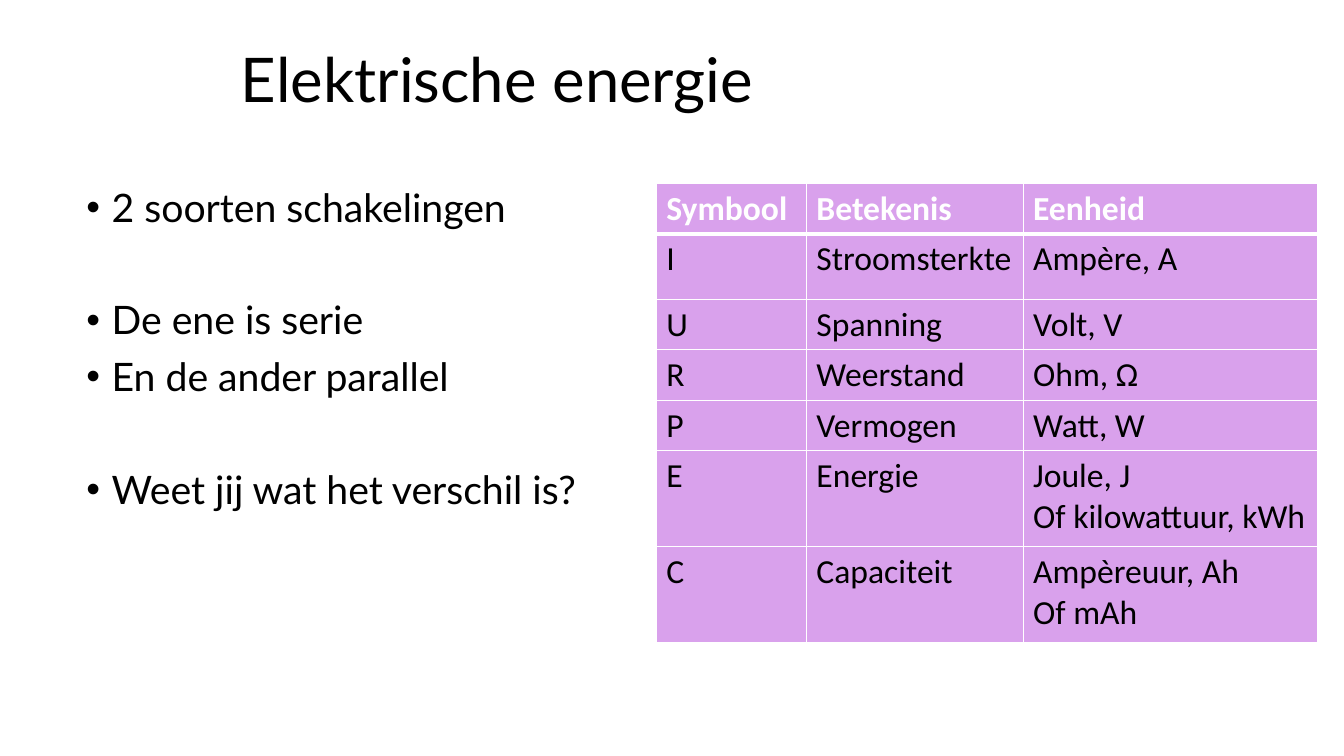
from dataclasses import dataclass
from lxml.etree import SubElement
from pptx import Presentation
from pptx.dml.color import RGBColor
from pptx.enum.text import MSO_ANCHOR, MSO_AUTO_SIZE, PP_ALIGN
from pptx.oxml.ns import qn
from pptx.oxml.xmlchemy import OxmlElement
from pptx.util import Pt

TITLE = "Elektrische energie"
# Text and space before, in points
POINTS = [
    ("2 soorten schakelingen", 0),
    ("De ene is serie", 50.3),
    ("En de ander parallel", 10),
    ("Weet jij wat het verschil is?", 50.3),
]
# Row height in points and cell texts
ROWS = [
    (36, ("Symbool", "Betekenis", "Eenheid")),
    (46.8, ("I", "Stroomsterkte", "Ampère, A")),
    (36, ("U", "Spanning", "Volt, V")),
    (36, ("R", "Weerstand", "Ohm, Ω")),
    (36, ("P", "Vermogen", "Watt, W")),
    (68.4, ("E", "Energie", "Joule, J\nOf kilowattuur, kWh")),
    (68.4, ("C", "Capaciteit", "Ampèreuur, Ah\nOf mAh")),
]
COLS = (107.3, 154.8, 210.2)
TOP = 131


@dataclass(frozen=True)
class Theme:
    black: str = "000000"
    white: str = "FFFFFF"
    purple: str = "9900CC"
    alpha: int = 37
    text: str = "Lato"
    grid: str = "Calibri"
    title: int = 44
    body: int = 28
    cell: int = 24


theme = Theme()


def style(para, face, size, color, bold=False):
    font = para.font
    font.name, font.size, font.bold = face, Pt(size), bold
    font.color.rgb = RGBColor.from_string(color)


def bullet(para):
    """Add a bullet with a hanging indent of 18 points."""
    props = para._p.get_or_add_pPr()
    props.set("marL", str(Pt(18)))
    props.set("indent", str(-Pt(18)))
    SubElement(props, qn("a:buFont")).set("typeface", "Arial")
    SubElement(props, qn("a:buChar")).set("char", "•")


def paint(cell, edges):
    """Fill a cell with see-through purple and draw its white edges."""
    cell.fill.solid()
    cell.fill.fore_color.rgb = RGBColor.from_string(theme.purple)
    props = cell._tc.get_or_add_tcPr()
    tint = props.find(f".//{qn('a:srgbClr')}")
    SubElement(tint, qn("a:alpha")).set("val", str(theme.alpha * 1000))
    for i, (side, width) in enumerate(edges.items()):
        line = OxmlElement(f"a:ln{side}")
        line.set("w", str(Pt(width)))
        fill = SubElement(line, qn("a:solidFill"))
        SubElement(fill, qn("a:srgbClr")).set("val", theme.white)
        props.insert(i, line)


def add_title(slide):
    title = slide.shapes.title
    title.left, title.top = Pt(164.9), Pt(6.5)
    title.width, title.height = Pt(828), Pt(104.4)
    frame = title.text_frame
    frame.text = TITLE
    frame.vertical_anchor = MSO_ANCHOR.MIDDLE
    frame.auto_size = MSO_AUTO_SIZE.NONE
    para = frame.paragraphs[0]
    para.alignment, para.line_spacing = PP_ALIGN.LEFT, 0.9
    style(para, theme.text, theme.title, theme.black)


def add_points(slide):
    box = slide.shapes.add_textbox(Pt(54.7), Pt(TOP), Pt(828), Pt(342.7))
    frame = box.text_frame
    frame.word_wrap = True
    for i, (text, gap) in enumerate(POINTS):
        para = frame.add_paragraph() if i else frame.paragraphs[0]
        para.text = text
        para.line_spacing, para.space_before = 0.9, Pt(gap)
        bullet(para)
        style(para, theme.text, theme.body, theme.black)


def add_grid(slide):
    high = sum(size for size, _ in ROWS)
    grid = slide.shapes.add_table(
        len(ROWS), len(COLS), Pt(468.7), Pt(TOP), Pt(sum(COLS)), Pt(high)
    ).table
    grid.horz_banding = False
    for col, width in zip(grid.columns, COLS):
        col.width = Pt(width)
    for r, (size, texts) in enumerate(ROWS):
        grid.rows[r].height = Pt(size)
        head = r == 0
        edges = {"L": 1, "R": 1, "T": 3 if r == 1 else 1, "B": 3 if head else 1}
        for c, text in enumerate(texts):
            cell = grid.cell(r, c)
            cell.text = text
            paint(cell, edges)
            for para in cell.text_frame.paragraphs:
                color = theme.white if head else theme.black
                style(para, theme.grid, theme.cell, color, head)


def main():
    deck = Presentation()
    deck.slide_width, deck.slide_height = Pt(960), Pt(540)
    slide = deck.slides.add_slide(deck.slide_layouts[5])
    add_title(slide)
    add_points(slide)
    add_grid(slide)
    deck.save("out.pptx")


if __name__ == "__main__":
    main()
